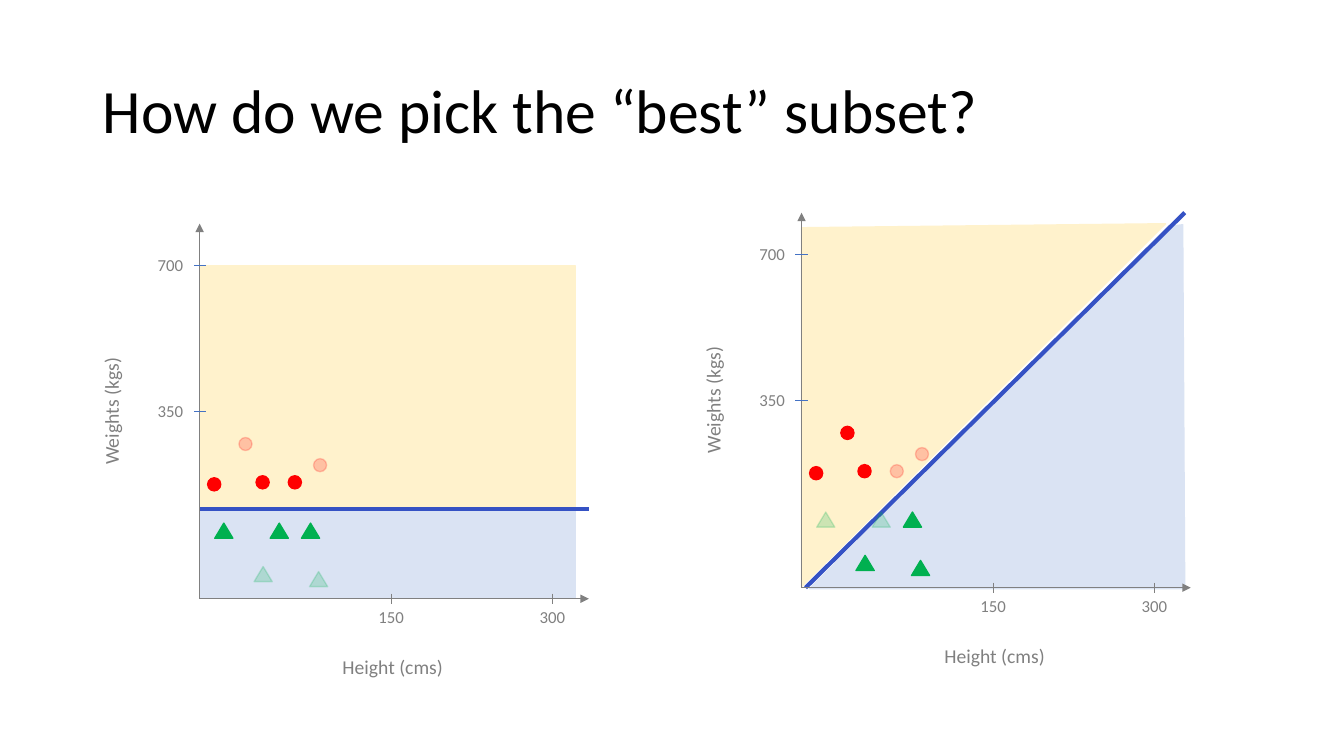
import pptx
import pptx.dml.color
import pptx.enum.dml
import pptx.enum.shapes
import pptx.enum.text
import pptx.oxml.ns
import pptx.util
from lxml import etree
from pptx.util import Inches

COLORS = {
    "black": "000000",
    "grey": "808080",
    "tick": "4472C4",
    "boundary": "3552C4",
    "heavy": "FFF2CC",
    "light": "DAE3F3",
    "red": "FF0000",
    "green": "00B050",
}
SHAPES = pptx.enum.shapes.MSO_SHAPE
ALIGN = pptx.enum.text.PP_ALIGN

# Sample corners, measured from the origin of a plot
CIRCLES = [(0.39, -1.6), (0.08, -1.2), (0.56, -1.22), (0.88, -1.22), (1.13, -1.39)]
TRIANGLES = [(1.09, -0.27), (0.54, -0.32), (0.7, -0.75), (0.15, -0.75), (1.01, -0.75)]
HEIGHT_TICKS = {"150": 1.9, "300": 3.5}
WEIGHT_TICKS = {"350": -1.86, "700": -3.31}


def rgb(name):
    return pptx.dml.color.RGBColor.from_string(COLORS[name])


def write_text(text_frame, text, size, color="grey", align=ALIGN.CENTER, spacing=1.0):
    paragraph = text_frame.paragraphs[0]
    paragraph.alignment = align
    paragraph.line_spacing = spacing
    run = paragraph.add_run()
    run.text = text
    run.font.name = "Calibri"
    run.font.size = pptx.util.Pt(size)
    run.font.color.rgb = rgb(color)


def add_label(slide, text, left, top, width, height, size, rotation=0):
    box = slide.shapes.add_textbox(Inches(left), Inches(top), Inches(width), Inches(height))
    box.rotation = rotation
    box.text_frame.word_wrap = False
    box.text_frame.auto_size = pptx.enum.text.MSO_AUTO_SIZE.SHAPE_TO_FIT_TEXT
    write_text(box.text_frame, text, size)


def add_line(slide, start, end, color="grey", width=0.5, arrow=False):
    line = slide.shapes.add_connector(
        pptx.enum.shapes.MSO_CONNECTOR.STRAIGHT, *map(Inches, start + end))
    line.line.color.rgb = rgb(color)
    line.line.width = pptx.util.Pt(width)
    if arrow:
        etree.SubElement(line.line._get_or_add_ln(),
                         pptx.oxml.ns.qn("a:tailEnd"), type="triangle")
    etree.SubElement(line._element.spPr, pptx.oxml.ns.qn("a:effectLst"))


def paint(shape, color, opacity=100):
    shape.shadow.inherit = False
    shape.fill.solid()
    shape.fill.fore_color.rgb = rgb(color)
    shape.line.color.rgb = rgb(color)
    shape.line.width = pptx.util.Pt(1)
    if opacity < 100:
        for element in list(shape._element.spPr.iter(pptx.oxml.ns.qn("a:srgbClr"))):
            etree.SubElement(element, pptx.oxml.ns.qn("a:alpha"), val=str(opacity * 1000))


def add_shape(slide, kind, left, top, width, height, color, opacity=100):
    shape = slide.shapes.add_shape(kind, *map(Inches, (left, top, width, height)))
    paint(shape, color, opacity)


def add_region(slide, points, color):
    corners = [(Inches(x), Inches(y)) for x, y in points]
    builder = slide.shapes.build_freeform(*corners[0])
    builder.add_line_segments(corners[1:], close=True)
    paint(builder.convert_to_shape(), color)


def add_axes(slide, x, y):
    add_line(slide, (x, y), (x, y - 3.72), arrow=True)
    add_line(slide, (x, y), (x + 3.86, y), arrow=True)
    add_label(slide, "Height (cms)", x + 1.31, y + 0.51, 1.21, 0.34, 14)
    add_label(slide, "Weights (kgs)", x - 1.51, y - 2.03, 1.27, 0.34, 14, rotation=270)
    for text, offset in HEIGHT_TICKS.items():
        add_line(slide, (x + offset, y - 0.05), (x + offset, y + 0.05))
        add_label(slide, text, x + offset - 0.23, y + 0.03, 0.46, 0.3, 12)
    for text, offset in WEIGHT_TICKS.items():
        add_line(slide, (x + 0.06, y + offset), (x - 0.06, y + offset), "tick")
        add_label(slide, text, x - 0.52, y + offset - 0.15, 0.46, 0.3, 12)


def add_samples(slide, x, y, faded_circles, faded_triangles):
    groups = [
        (SHAPES.OVAL, CIRCLES, 0.13, 0.13, "red", faded_circles),
        (SHAPES.ISOSCELES_TRIANGLE, TRIANGLES, 0.18, 0.15, "green", faded_triangles),
    ]
    for kind, corners, width, height, color, faded in groups:
        for index, (dx, dy) in enumerate(corners):
            add_shape(slide, kind, x + dx, y + dy, width, height, color,
                      opacity=20 if index in faded else 100)


def main():
    presentation = pptx.Presentation()
    presentation.slide_width = Inches(13.33)
    presentation.slide_height = Inches(7.5)
    slide = presentation.slides.add_slide(presentation.slide_layouts[5])

    # Title
    title = slide.shapes.title
    title.left, title.top = Inches(0.92), Inches(0.4)
    title.width, title.height = Inches(11.5), Inches(1.45)
    title.text_frame.vertical_anchor = pptx.enum.text.MSO_ANCHOR.MIDDLE
    title.text_frame.auto_size = pptx.enum.text.MSO_AUTO_SIZE.NONE
    write_text(title.text_frame, "How do we pick the “best” subset?", 44,
               color="black", align=ALIGN.LEFT, spacing=0.9)

    # Left plot: split by weight only
    add_shape(slide, SHAPES.RECTANGLE, 1.98, 2.64, 3.73, 2.39, "heavy")
    add_shape(slide, SHAPES.RECTANGLE, 1.98, 5.05, 3.73, 0.88, "light")
    add_line(slide, (1.98, 5.05), (5.84, 5.05), "boundary", 3)
    add_axes(slide, 1.98, 5.94)
    add_samples(slide, 1.98, 5.94, faded_circles=(0, 4), faded_triangles=(0, 1))

    # Right plot: split along the diagonal
    add_region(slide, [(8.03, 5.84), (11.64, 2.24), (11.73, 2.23), (11.75, 5.84)], "light")
    add_region(slide, [(7.95, 5.82), (11.56, 2.22), (7.95, 2.26)], "heavy")
    add_line(slide, (7.99, 5.83), (11.75, 2.11), "boundary", 3)
    add_axes(slide, 7.95, 5.83)
    add_samples(slide, 7.95, 5.83, faded_circles=(3, 4), faded_triangles=(2, 3))

    presentation.save("out.pptx")


if __name__ == "__main__":
    main()
